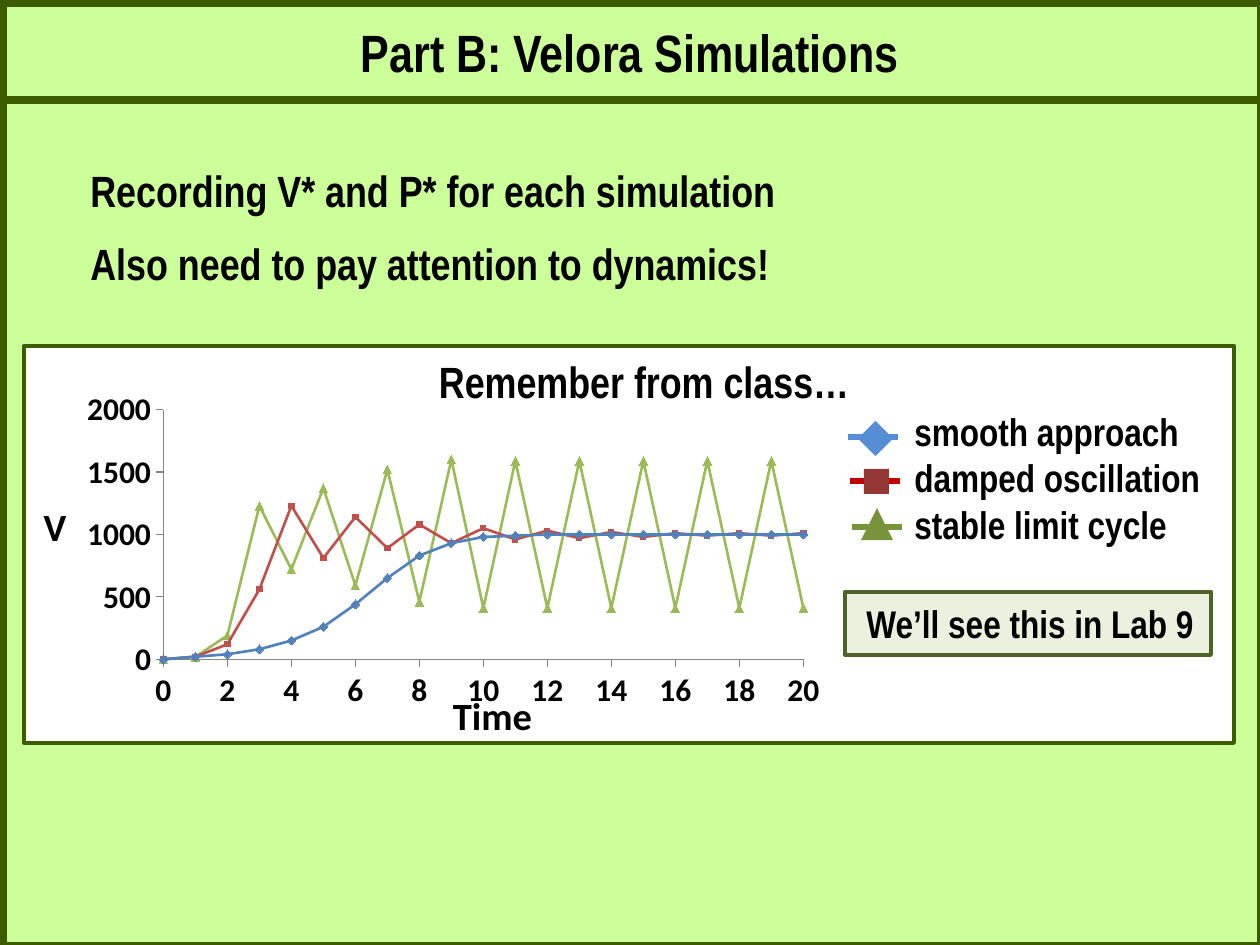
"""Build the Part B simulations slide with its dynamics chart."""
from lxml import etree
from pptx import Presentation
from pptx.chart.data import XyChartData
from pptx.dml.color import RGBColor
from pptx.enum.chart import XL_CHART_TYPE, XL_MARKER_STYLE, XL_TICK_LABEL_POSITION, XL_TICK_MARK
from pptx.enum.shapes import MSO_CONNECTOR, MSO_SHAPE
from pptx.enum.text import PP_ALIGN
from pptx.oxml import parse_xml
from pptx.oxml.ns import nsdecls, qn
from pptx.util import Pt

RECT, TRIANGLE = MSO_SHAPE.RECTANGLE, MSO_SHAPE.ISOSCELES_TRIANGLE
LEFT, CENTER = PP_ALIGN.LEFT, PP_ALIGN.CENTER
DIAMOND_MARK, SQUARE_MARK, TRIANGLE_MARK = (
    XL_MARKER_STYLE.DIAMOND, XL_MARKER_STYLE.SQUARE, XL_MARKER_STYLE.TRIANGLE)
TICK_OUT, TICK_NONE = XL_TICK_MARK.OUTSIDE, XL_TICK_MARK.NONE
NARROW, SANS = "Arial Narrow", "Calibri"
PX = 914400 / 126

COLORS = {
    "background": "CCFF99", "frame": "3D5C00", "text": "000000", "panel": "FFFFFF",
    "axis": "868686", "note": "EBF1DE", "note_line": "4F6228",
    "smooth": "4F81BD", "damped": "C0504D", "cycle": "9BBB59",
    "key_smooth": "558ED5", "key_damped": "953735", "key_damped_line": "C00000",
    "key_cycle": "77933C",
}

SERIES = [
    ("Series 1", "smooth", DIAMOND_MARK, 5,
     [0, 20, 40, 80, 150, 260, 440, 650, 830, 930, 980, 990] + [1000] * 19),
    ("Series 2", "damped", SQUARE_MARK, 3,
     [0, 20, 120, 560, 1230, 810, 1140, 890, 1080, 930, 1050, 960, 1030, 970, 1020,
      980, 1010, 990, 1010, 990, 1010] + [1000] * 10),
    ("Series 3", "cycle", TRIANGLE_MARK, 5,
     [0, 20, 190, 1230, 720, 1370, 590, 1520, 460, 1600, 410] + [1590, 410] * 10),
]
CHART_BOX = (72, 383, 762, 333)
PLOT = {"x": 0.12, "y": 0.08, "w": 0.84, "h": 0.75}

TITLE = ((156, 14, 948, 77), ["Part B: Velora Simulations"], 30, NARROW, CENTER)
BODY = ((78, 158, 1104, 140),
        ["Recording V* and P* for each simulation", "Also need to pay attention to dynamics!"],
        25, NARROW, LEFT, 11.5)
LABELS = [
    ((19, 497, 72, 59), ["V"], 22, SANS, CENTER),
    ((425, 686, 135, 59), ["Time"], 22, SANS, CENTER),
    ((902, 402, 326, 152), ["smooth approach", "damped oscillation", "stable limit cycle"],
     22, NARROW, LEFT),
    ((846, 594, 368, 59), ["We’ll see this in Lab 9"], 22, NARROW, CENTER),
    ((368, 349, 552, 66), ["Remember from class…"], 25, NARROW, CENTER),
]
KEYS = [
    (RECT, (863, 426, 25, 25), 45, "key_smooth", (848, 437), "key_smooth"),
    (RECT, (864, 469, 25, 25), 0, "key_damped", (850, 481), "key_damped_line"),
    (TRIANGLE, (861, 508, 32, 32), 0, "key_cycle", (852, 527), "key_cycle"),
]
KEY_LENGTH = 50


def px(*values):
    return [round(v * PX) for v in values]


def rgb(name):
    return RGBColor.from_string(COLORS[name])


def style_font(font, size, name):
    font.size, font.name, font.bold = Pt(size), name, True
    font.color.rgb = rgb("text")


def style_line(line, color, width):
    line.color.rgb, line.width = rgb(color), Pt(width)


def add_box(s, kind, box, fill=None, line=None, width=2.25):
    sp = s.shapes.add_shape(kind, *px(*box))
    sp.shadow.inherit = False
    if fill:
        sp.fill.solid()
        sp.fill.fore_color.rgb = rgb(fill)
    else:
        sp.fill.background()
    if line:
        style_line(sp.line, line, width)
    else:
        sp.line.fill.background()
    return sp


def add_line(s, x, y, length, color, width):
    sp = s.shapes.add_connector(MSO_CONNECTOR.STRAIGHT, *px(x, y, x + length, y))
    style_line(sp.line, color, width)
    etree.SubElement(sp._element.spPr, qn("a:effectLst"))


def add_text(s, box, lines, size, font, align, gap=0):
    tf = s.shapes.add_textbox(*px(*box)).text_frame
    tf.word_wrap = True
    for i, line in enumerate(lines):
        p = tf.paragraphs[0] if i == 0 else tf.add_paragraph()
        p.text, p.alignment = line, align
        if i:
            p.space_before = Pt(gap)
        style_font(p.font, size, font)


def style_axis(axis, top, step):
    axis.minimum_scale, axis.maximum_scale, axis.major_unit = 0, top, step
    axis.has_major_gridlines = False
    axis.major_tick_mark, axis.minor_tick_mark = TICK_OUT, TICK_NONE
    axis.tick_label_position = XL_TICK_LABEL_POSITION.NEXT_TO_AXIS
    axis.tick_labels.number_format = "0"
    axis.tick_labels.number_format_is_linked = False
    style_font(axis.tick_labels.font, 18, SANS)
    style_line(axis.format.line, "axis", 0.75)


def add_dynamics_chart(s):
    data = XyChartData()
    for name, _, _, _, values in SERIES:
        series = data.add_series(name)
        for time, value in enumerate(values):
            series.add_data_point(time, value)
    chart = s.shapes.add_chart(XL_CHART_TYPE.XY_SCATTER_LINES, *px(*CHART_BOX), data).chart
    chart.has_legend = chart.has_title = False
    style_font(chart.font, 22, SANS)
    style_axis(chart.category_axis, 20, 2)
    style_axis(chart.value_axis, 2000, 500)
    plot = chart.plots[0]
    plot.vary_by_categories = False
    for series, (_, color, mark, size, _) in zip(plot.series, SERIES):
        series.smooth = False
        style_line(series.format.line, color, 1.5)
        series.marker.style, series.marker.size = mark, size
        series.marker.format.fill.solid()
        series.marker.format.fill.fore_color.rgb = rgb(color)
        style_line(series.marker.format.line, color, 0.75)
    area = chart._chartSpace.chart.plotArea
    for old in area.findall(qn("c:layout")):
        area.remove(old)
    sizes = "".join(f'<c:{key} val="{value}"/>' for key, value in PLOT.items())
    area.insert(0, parse_xml(
        f'<c:layout {nsdecls("c")}><c:manualLayout><c:layoutTarget val="inner"/>'
        f'<c:xMode val="edge"/><c:yMode val="edge"/>{sizes}</c:manualLayout></c:layout>'))


def main():
    prs = Presentation()
    prs.slide_width, prs.slide_height = px(1260, 945)
    s = prs.slides.add_slide(prs.slide_layouts[6])
    s.background.fill.solid()
    s.background.fill.fore_color.rgb = rgb("background")
    add_box(s, RECT, (2, 2, 1260, 945), line="frame", width=6)
    add_line(s, 2, 100, 1260, "frame", 5)
    add_text(s, *TITLE)
    add_text(s, *BODY)
    add_box(s, RECT, (24, 346, 1210, 397), "panel", "frame")
    add_dynamics_chart(s)
    for kind, box, angle, fill, start, line in KEYS:
        add_line(s, *start, KEY_LENGTH, line, 3)
        add_box(s, kind, box, fill).rotation = angle
    add_box(s, RECT, (845, 592, 366, 63), "note", "note_line")
    for label in LABELS:
        add_text(s, *label)
    prs.save("out.pptx")


if __name__ == "__main__":
    main()
